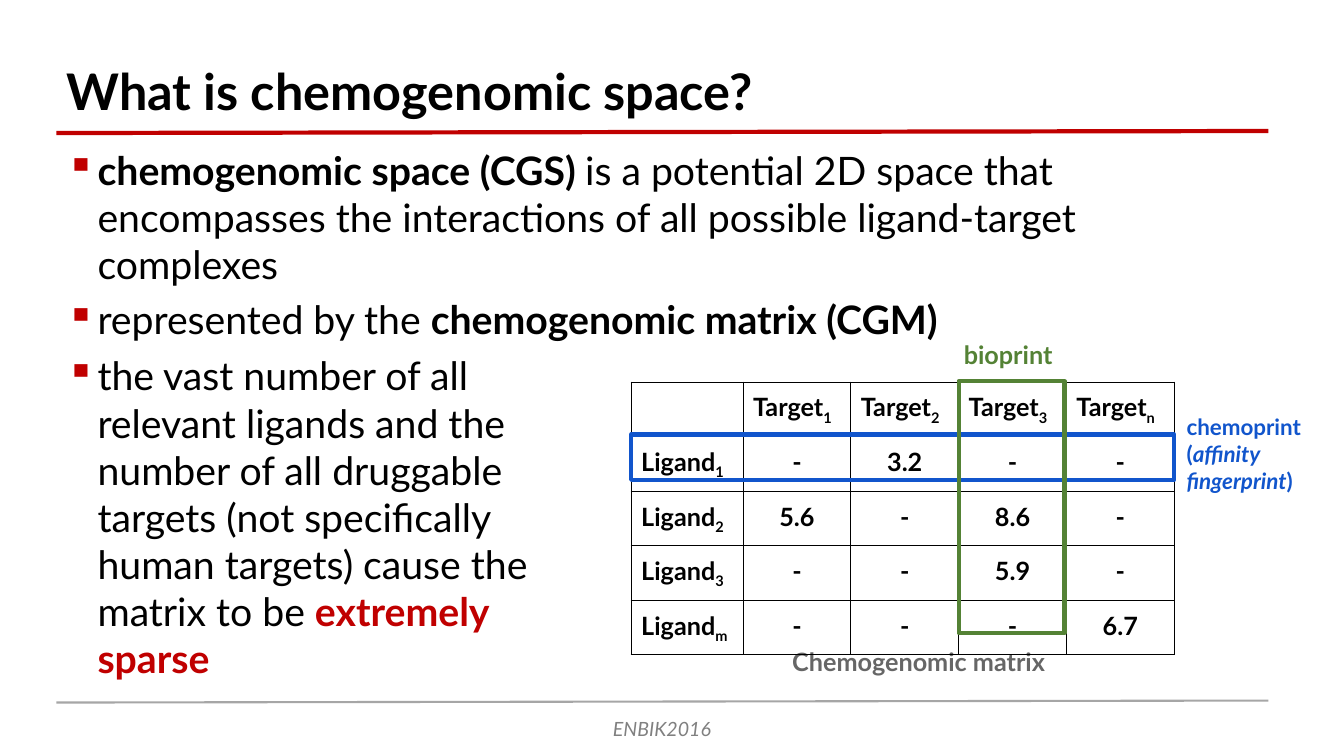
from lxml.etree import SubElement
from pptx import Presentation
from pptx.dml.color import RGBColor
from pptx.enum.shapes import MSO_CONNECTOR, MSO_SHAPE
from pptx.enum.text import MSO_ANCHOR, MSO_AUTO_SIZE, PP_ALIGN
from pptx.oxml.ns import qn
from pptx.util import Inches, Pt

WIDTH, HEIGHT = Inches(13.33), Inches(7.5)
COLORS = {"black": "000000", "red": "C00000", "blue": "1155CC", "green": "548235",
          "caption": "666666", "rule": "A6A6A6", "footer": "808080"}
BOLD, ITALIC = {"bold": True}, {"italic": True}

# Shared edges and matrix columns, in percent of the slide
LEFT, RIGHT = 4.2, 94.37
MATRIX_LEFT, MATRIX_TOP = 46.96, 50.53
LIGAND_COL, TARGET_COL, MATRIX_ROW = 8.33, 8.02, 5.7
TARGETS, LIGANDS = "123n", "123m"
MATRIX_WIDTH = LIGAND_COL + TARGET_COL * len(TARGETS)
AFFINITIES = [["-", "3.2", "-", "-"],
              ["5.6", "-", "8.6", "-"],
              ["-", "-", "5.9", "-"],
              ["-", "-", "-", "6.7"]]


def across(percent):
    return round(WIDTH * percent / 100)


def down(percent):
    return round(HEIGHT * percent / 100)


def area(left, top, width, height):
    return across(left), down(top), across(width), down(height)


def rgb(color):
    return RGBColor.from_string(COLORS[color])


def write(paragraph, runs, size, color="black", **common):
    """Add (text, format) runs to a paragraph."""
    for text, own in runs:
        run = paragraph.add_run()
        run.text = text
        values = {"name": "Lato", "size": Pt(size), **common, **own}
        subscript = values.pop("subscript", False)
        run.font.color.rgb = rgb(values.pop("color", color))
        for key, value in values.items():
            setattr(run.font, key, value)
        if subscript:
            run.font._element.set("baseline", "-25000")


def add_bullet(paragraph):
    properties = paragraph._p.get_or_add_pPr()
    indent = Inches(0.31)
    properties.set("marL", str(indent))
    properties.set("indent", str(-indent))
    bullet_color = SubElement(properties, qn("a:buClr"))
    SubElement(bullet_color, qn("a:srgbClr"), val=COLORS["red"])
    SubElement(properties, qn("a:buChar"), char="▪")


def add_text(slide, box, paragraphs, size, bullet_gap=None, inset=0.05, wrap=True, **style):
    frame = slide.shapes.add_textbox(*area(*box)).text_frame
    frame.word_wrap = wrap
    frame.margin_top = frame.margin_bottom = Inches(inset)
    for index, runs in enumerate(paragraphs):
        paragraph = frame.add_paragraph() if index else frame.paragraphs[0]
        if bullet_gap:
            paragraph.space_before = Pt(bullet_gap)
            add_bullet(paragraph)
        write(paragraph, runs, size, **style)


def add_rule(slide, start, end, color, weight):
    rule = slide.shapes.add_connector(MSO_CONNECTOR.STRAIGHT, across(LEFT), down(start),
                                      across(RIGHT), down(end))
    rule.line.color.rgb = rgb(color)
    rule.line.width = Pt(weight)
    SubElement(rule._element.spPr, qn("a:effectLst"))


def add_frame(slide, box, color):
    frame = slide.shapes.add_shape(MSO_SHAPE.RECTANGLE, *area(*box))
    frame.shadow.inherit = False
    frame.fill.background()
    frame.line.color.rgb = rgb(color)
    frame.line.width = Pt(3)


def add_title(slide, text):
    title = slide.shapes.title
    title.left, title.top, title.width, title.height = area(LEFT, 7.2, 75.77, 9.47)
    frame = title.text_frame
    frame.auto_size = MSO_AUTO_SIZE.NONE
    frame.vertical_anchor = MSO_ANCHOR.MIDDLE
    frame.paragraphs[0].alignment = PP_ALIGN.LEFT
    write(frame.paragraphs[0], [(text, BOLD)], 36)


def format_cell(cell):
    for side in ("left", "right", "top", "bottom"):
        setattr(cell, f"margin_{side}", Inches(0.1))
    properties = cell._tc.get_or_add_tcPr()
    for edge in ("lnL", "lnR", "lnT", "lnB"):
        border = SubElement(properties, qn(f"a:{edge}"), w=str(Pt(0.75)))
        fill = SubElement(border, qn("a:solidFill"))
        SubElement(fill, qn("a:srgbClr"), val=COLORS["black"])
    cell.fill.background()


def add_matrix(slide):
    count = len(LIGANDS) + 1, len(TARGETS) + 1
    box = area(MATRIX_LEFT, MATRIX_TOP, MATRIX_WIDTH, MATRIX_ROW * count[0])
    matrix = slide.shapes.add_table(*count, *box).table
    matrix.first_row = matrix.horz_banding = False
    for index, column in enumerate(matrix.columns):
        column.width = across(TARGET_COL if index else LIGAND_COL)

    def label(word, number):
        return [(word, {}), (number, {"subscript": True})]

    header = [[("", {})]] + [label("Target", number) for number in TARGETS]
    body = [[label("Ligand", number)] + [[(value, {})] for value in values]
            for number, values in zip(LIGANDS, AFFINITIES)]
    for row, contents in enumerate([header] + body):
        matrix.rows[row].height = down(MATRIX_ROW)
        for col, runs in enumerate(contents):
            cell = matrix.cell(row, col)
            format_cell(cell)
            paragraph = cell.text_frame.paragraphs[0]
            paragraph.alignment = PP_ALIGN.CENTER if row and col else PP_ALIGN.LEFT
            write(paragraph, runs, 18, bold=True)


def main():
    deck = Presentation()
    deck.slide_width, deck.slide_height = WIDTH, HEIGHT
    slide = deck.slides.add_slide(deck.slide_layouts[5])

    # Title and definition
    add_title(slide, "What is chemogenomic space?")
    add_rule(slide, 17.6, 17.33, "red", 3)
    add_text(slide, (LEFT, 18.67, 85.22, 27.6), [
        [("chemogenomic space (CGS) ", BOLD),
         ("is a potential 2D space that encompasses the interactions of all possible "
          "ligand-target complexes", {})],
        [("represented by the ", {}), ("chemogenomic matrix (CGM)", BOLD)],
    ], 28, bullet_gap=6)
    add_text(slide, (LEFT, 45.87, 41.19, 45.33), [
        [("the vast number of all relevant ligands and the number of all druggable targets "
          "(not specifically human targets) cause the matrix to be ", {}),
         ("extremely sparse", {"bold": True, "color": "red"})],
    ], 28, bullet_gap=12)

    # Matrix with its caption
    add_text(slide, (58.21, 84.13, 21, 6.67), [[("Chemogenomic matrix", {})]], 18,
             inset=0.1, color="caption", bold=True)
    add_matrix(slide)

    # Highlighted row and column
    add_text(slide, (87.55, 53.33, 12, 13.47),
             [[("chemoprint", {})], [("(", {}), ("affinity", ITALIC)],
              [("fingerprint", ITALIC), (")", {})]],
             16, inset=0.1, color="blue", bold=True)
    add_frame(slide, (MATRIX_LEFT, 57.47, MATRIX_WIDTH, 6), "blue")
    bioprint_left = MATRIX_LEFT + LIGAND_COL + 2 * TARGET_COL
    add_frame(slide, (bioprint_left, 50.4, 7.88, 33.33), "green")
    add_text(slide, (70.97, 44.27, 9, 5.33), [[("bioprint", {})]], 18,
             color="green", bold=True)

    # Footer
    add_rule(slide, 92.93, 92.67, "rule", 1.5)
    add_text(slide, (44.86, 94.13, 8.93, 4.53), [[("ENBIK2016", ITALIC)]], 14,
             wrap=False, color="footer")

    deck.save("out.pptx")


if __name__ == "__main__":
    main()
